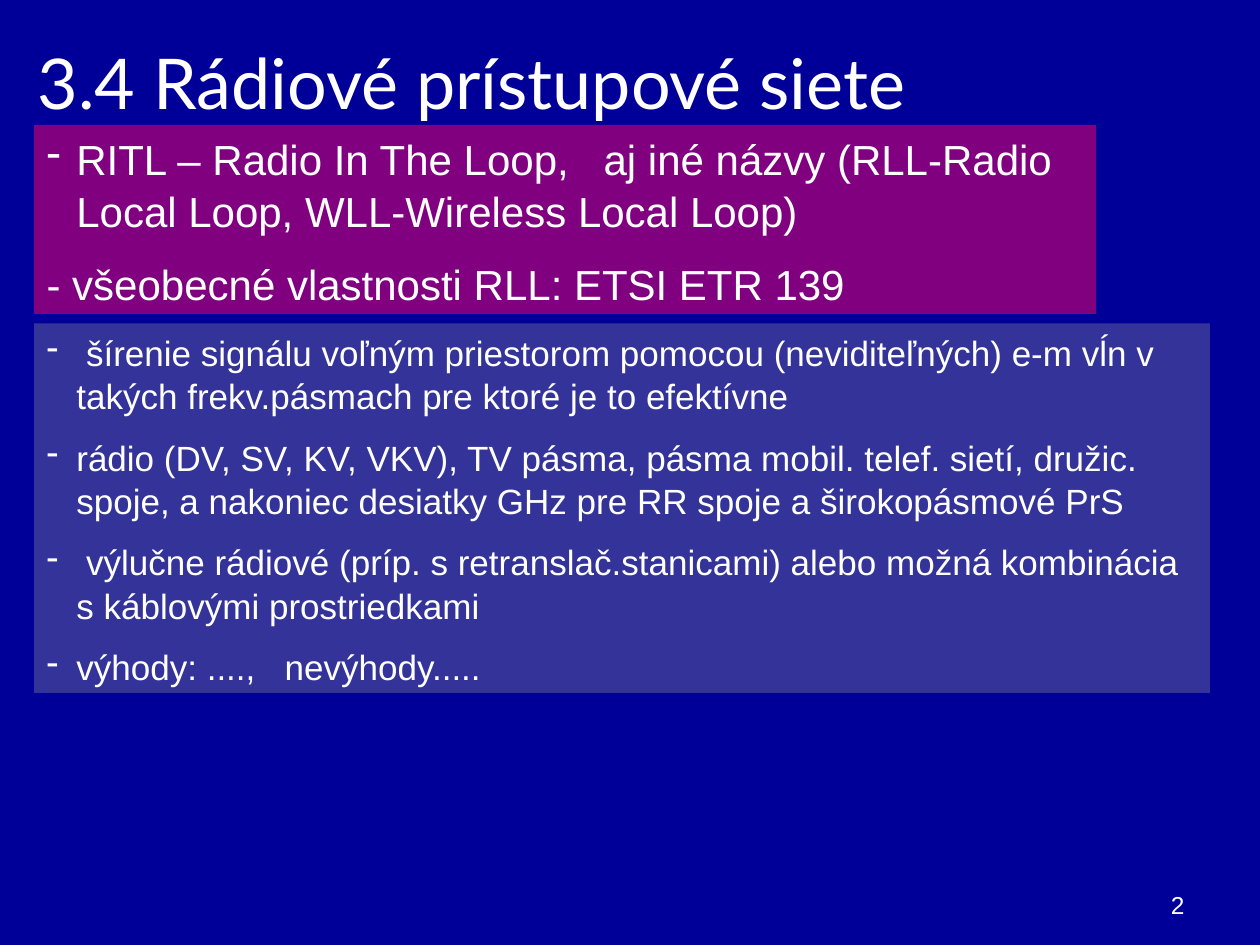
from lxml import etree
from pptx import Presentation
from pptx.dml.color import RGBColor
from pptx.enum.shapes import MSO_SHAPE
from pptx.enum.text import MSO_ANCHOR, PP_ALIGN
from pptx.oxml.ns import qn
from pptx.util import Cm, Pt

RECT = MSO_SHAPE.RECTANGLE
TOP, MIDDLE, BOTTOM = MSO_ANCHOR.TOP, MSO_ANCHOR.MIDDLE, MSO_ANCHOR.BOTTOM
LEFT, RIGHT = PP_ALIGN.LEFT, PP_ALIGN.RIGHT

COLORS = {"back": "000099", "names": "800080", "facts": "333399", "text": "FFFFFF"}
INDENT = 0.6  # hanging indent of the dashes, cm

TITLE = "3.4 Rádiové prístupové siete"
NUMBER = "2"

# Panels: place (cm), text size, and lines as (text, has dash, tab stop in cm)
PANELS = [
    {"fill": "facts", "box": (0.69, 6.52, 23.7, 7.45), "size": 20, "lines": [
        (" šírenie signálu voľným priestorom pomocou (neviditeľných) e-m vĺn v "
         "takých frekv.pásmach pre ktoré je to efektívne", True, None),
        ("rádio (DV, SV, KV, VKV), TV pásma, pásma mobil. telef. sietí, družic. "
         "spoje, a nakoniec desiatky GHz pre RR spoje a širokopásmové PrS", True, None),
        (" výlučne rádiové (príp. s retranslač.stanicami) alebo možná kombinácia "
         "s káblovými prostriedkami", True, None),
        ("výhody: ....,\tnevýhody.....", True, 4.8),
    ]},
    {"fill": "names", "box": (0.69, 2.52, 21.41, 3.81), "size": 24, "lines": [
        ("RITL – Radio In The Loop,\taj iné názvy (RLL-Radio Local Loop, "
         "WLL-Wireless Local Loop)", True, 11.23),
        ("- všeobecné vlastnosti RLL: ETSI ETR 139", False, None),
    ]},
]


def color(name):
    return RGBColor.from_string(COLORS[name])


def style(para, size, face="Arial", align=LEFT):
    para.alignment = align
    font = para.font
    font.size, font.name = Pt(size), face
    font.color.rgb = color("text")


def add_dash(para):
    props = para._p.get_or_add_pPr()
    props.set("marL", str(Cm(INDENT)))
    props.set("indent", str(-Cm(INDENT)))
    etree.SubElement(props, qn("a:buChar")).set("char", "-")


def add_tab(para, stop):
    props = para._p.get_or_add_pPr()
    tabs = etree.SubElement(props, qn("a:tabLst"))
    tab = etree.SubElement(tabs, qn("a:tab"))
    tab.set("pos", str(Cm(stop)))
    tab.set("algn", "l")


def add_panel(slide, panel):
    shape = slide.shapes.add_shape(RECT, *map(Cm, panel["box"]))
    shape.shadow.inherit = False
    shape.fill.solid()
    shape.fill.fore_color.rgb = color(panel["fill"])
    shape.line.fill.background()
    frame = shape.text_frame
    frame.word_wrap, frame.vertical_anchor = True, TOP
    for i, (text, dash, stop) in enumerate(panel["lines"]):
        para = frame.add_paragraph() if i else frame.paragraphs[0]
        para.text = text
        para.line_spacing = 1.04
        if i:
            para.space_before = Pt(panel["size"] / 2)
        if dash:
            add_dash(para)
        if stop:
            add_tab(para, stop)
        style(para, panel["size"])


def main():
    prs = Presentation()
    prs.slide_width, prs.slide_height = Cm(25.4), Cm(19.05)
    slide = prs.slides.add_slide(prs.slide_layouts[5])
    slide.background.fill.solid()
    slide.background.fill.fore_color.rgb = color("back")

    # Title
    title = slide.shapes.title
    title.left, title.top, title.width, title.height = map(Cm, (0.51, 0.53, 18.59, 2.21))
    title.text_frame.text = TITLE
    title.text_frame.vertical_anchor = MIDDLE
    style(title.text_frame.paragraphs[0], 40, "Lato")

    # Text panels
    for panel in PANELS:
        add_panel(slide, panel)

    # Slide number
    frame = slide.shapes.add_textbox(*map(Cm, (18.21, 17.35, 5.92, 1.32))).text_frame
    frame.word_wrap, frame.vertical_anchor = True, BOTTOM
    frame.text = NUMBER
    style(frame.paragraphs[0], 14, align=RIGHT)

    prs.save("out.pptx")


if __name__ == "__main__":
    main()
